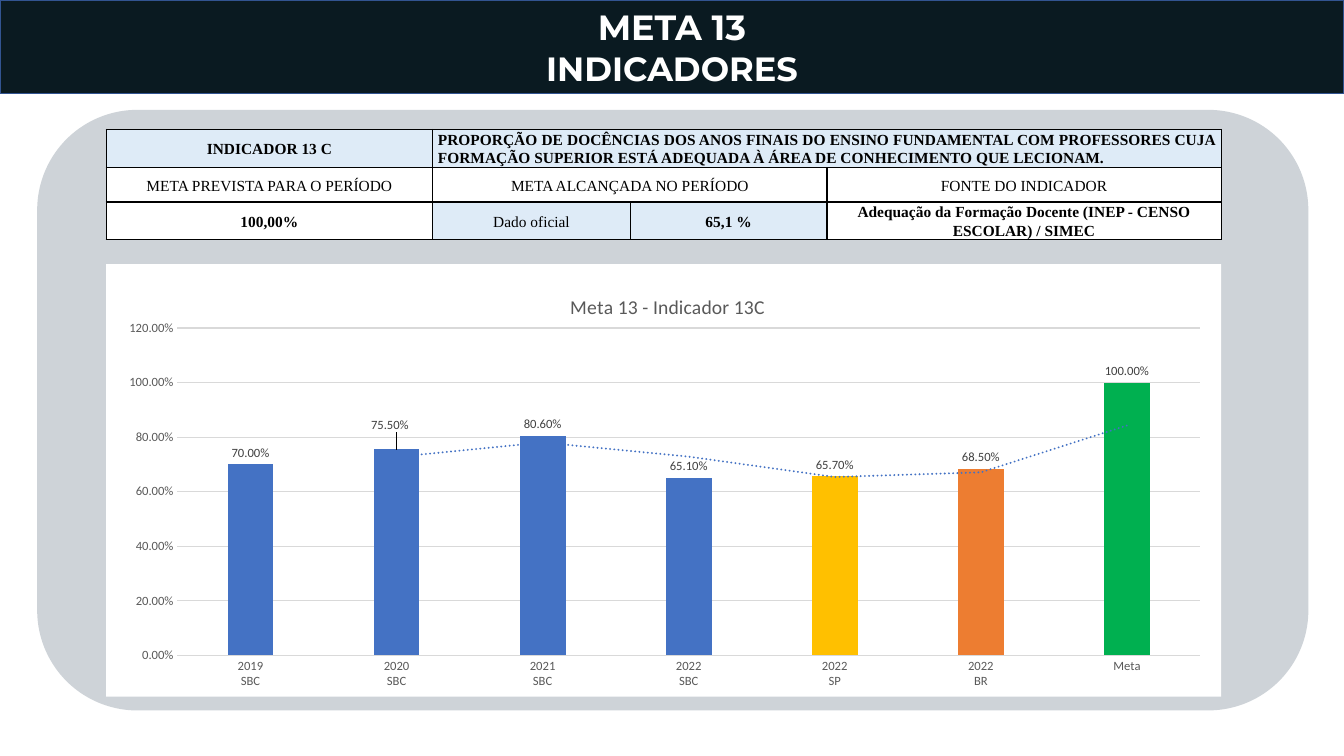
from dataclasses import dataclass
from typing import Any, Optional

from lxml import etree
from pptx import Presentation
from pptx.chart.data import CategoryChartData as ChartData
from pptx.dml.color import RGBColor as Rgb
from pptx.enum.chart import XL_CHART_TYPE as ChartKind
from pptx.enum.chart import XL_LABEL_POSITION as LabelPlace
from pptx.enum.chart import XL_TICK_MARK as Tick
from pptx.enum.shapes import MSO_SHAPE as Preset
from pptx.enum.text import MSO_ANCHOR as Anchor
from pptx.enum.text import MSO_AUTO_SIZE as AutoSize
from pptx.enum.text import PP_ALIGN as Align
from pptx.oxml import parse_xml
from pptx.oxml.ns import nsdecls, qn
from pptx.util import Pt

COLORS = {
    "band": "0A1A21", "band_line": "325491", "panel": "CED3D8", "white": "FFFFFF",
    "black": "000000", "cell": "DEEBF7", "axis": "595959", "label": "404040",
    "grid": "D9D9D9", "city": "4472C4", "state": "FFC000", "country": "ED7D31",
    "goal": "00B050",
}
PERCENT = "0.00%"
CHART_FONT = "Calibri"


@dataclass
class CellSpec:
    row: int
    column: int
    text: str
    bold: bool = False
    fill: str = "white"
    span: int = 1
    align: Any = Align.CENTER


@dataclass
class Bar:
    category: str
    value: float
    color: Optional[str] = None


CELLS = [
    CellSpec(0, 0, "INDICADOR 13 C", True, "cell"),
    CellSpec(0, 1, "PROPORÇÃO DE DOCÊNCIAS DOS ANOS FINAIS DO ENSINO FUNDAMENTAL COM "
             "PROFESSORES CUJA FORMAÇÃO SUPERIOR ESTÁ ADEQUADA À ÁREA DE CONHECIMENTO "
             "QUE LECIONAM.", True, "cell", 3, Align.JUSTIFY),
    CellSpec(1, 0, "META PREVISTA PARA O PERÍODO"),
    CellSpec(1, 1, "META ALCANÇADA NO PERÍODO", span=2),
    CellSpec(1, 3, "FONTE DO INDICADOR"),
    CellSpec(2, 0, "100,00%", True),
    CellSpec(2, 1, "Dado oficial", fill="cell"),
    CellSpec(2, 2, "65,1 %", True, "cell"),
    CellSpec(2, 3, "Adequação da Formação Docente (INEP - CENSO ESCOLAR) / SIMEC", True),
]
BARS = [
    Bar("2019\nSBC", 0.7), Bar("2020\nSBC", 0.755), Bar("2021\nSBC", 0.806),
    Bar("2022\nSBC", 0.651), Bar("2022\nSP", 0.657, "state"),
    Bar("2022\nBR", 0.685, "country"), Bar("Meta", 1, "goal"),
]


def rgb(name: str) -> Rgb:
    return Rgb.from_string(COLORS[name])


def set_all(target: Any, values: dict) -> None:
    for name, value in values.items():
        setattr(target, name, value)


def paint(target: Any, color: str) -> None:
    target.fill.solid()
    target.fill.fore_color.rgb = rgb(color)


def style_font(font: Any, name: str, size: float, color: str, bold: bool = False) -> None:
    set_all(font, {"name": name, "size": Pt(size), "bold": bold})
    font.color.rgb = rgb(color)


def style_line(line: Any, color: str, width: float) -> None:
    line.color.rgb = rgb(color)
    line.width = Pt(width)


def add_title(page: Any) -> None:
    box = page.shapes.title
    set_all(box, {"left": Pt(0), "top": Pt(0), "width": Pt(960), "height": Pt(67)})
    paint(box, "band")
    style_line(box.line, "band_line", 1)
    frame = box.text_frame
    set_all(frame, {"text": "META 13\nINDICADORES", "auto_size": AutoSize.NONE,
                    "vertical_anchor": Anchor.MIDDLE})
    for para, size in zip(frame.paragraphs, (25, 24)):
        set_all(para, {"alignment": Align.CENTER, "line_spacing": 1.0})
        style_font(para.runs[0].font, "Montserrat", size, "white", True)


def add_panel(page: Any) -> None:
    panel = page.shapes.add_shape(Preset.ROUNDED_RECTANGLE, Pt(26.6), Pt(78.5), Pt(908), Pt(429))
    panel.shadow.inherit = False
    paint(panel, "panel")
    panel.line.fill.background()


def add_borders(cell: Any) -> None:
    properties = cell._tc.get_or_add_tcPr()
    for index, side in enumerate(("lnL", "lnR", "lnT", "lnB")):
        properties.insert(index, parse_xml(
            f'<a:{side} {nsdecls("a")} w="{Pt(1)}"><a:solidFill>'
            f'<a:srgbClr val="{COLORS["black"]}"/></a:solidFill></a:{side}>'))


def add_indicator_table(page: Any) -> None:
    widths, heights = (233.4, 141, 140.6, 281.5), (27.4, 24.4, 27.1)
    frame = page.shapes.add_table(len(heights), len(widths), Pt(75.8), Pt(92.5),
                                  Pt(sum(widths)), Pt(sum(heights)))
    table = frame.table
    set_all(table, {"first_row": False, "horz_banding": False})
    for column, width in zip(table.columns, widths):
        column.width = Pt(width)
    for row, height in zip(table.rows, heights):
        row.height = Pt(height)
    for cell in table.iter_cells():
        set_all(cell, {"margin_left": Pt(3.6), "margin_right": Pt(3.6), "margin_top": Pt(0.5),
                       "margin_bottom": Pt(0), "vertical_anchor": Anchor.MIDDLE})
        paint(cell, "white")
        add_borders(cell)
    for item in CELLS:
        cell = table.cell(item.row, item.column)
        if item.span > 1:
            cell.merge(table.cell(item.row, item.column + item.span - 1))
        paint(cell, item.fill)
        para = cell.text_frame.paragraphs[0]
        set_all(para, {"alignment": item.align, "line_spacing": 1.07, "space_after": Pt(8)})
        span = para.add_run()
        span.text = item.text
        style_font(span.font, "Times New Roman", 11, "black", item.bold)


def layout_xml(**places: Any) -> Any:
    """Manual chart layout; keyword names are the c:manualLayout children."""
    layout = etree.Element(qn("c:layout"))
    manual = etree.SubElement(layout, qn("c:manualLayout"))
    for name, value in places.items():
        etree.SubElement(manual, qn(f"c:{name}")).set("val", str(value))
    return layout


def style_axes(chart: Any) -> None:
    for axis in (chart.category_axis, chart.value_axis):
        set_all(axis, {"major_tick_mark": Tick.NONE, "minor_tick_mark": Tick.NONE})
        style_font(axis.tick_labels.font, CHART_FONT, 9, "axis")
    style_line(chart.category_axis.format.line, "grid", 0.75)
    values = chart.value_axis
    set_all(values, {"minimum_scale": 0, "maximum_scale": 1.2, "major_unit": 0.2})
    set_all(values.tick_labels, {"number_format": PERCENT, "number_format_is_linked": False})
    style_line(values.major_gridlines.format.line, "grid", 0.75)
    values.format.line.fill.background()


def style_series(plot: Any) -> None:
    set_all(plot, {"gap_width": 219, "overlap": -27, "vary_by_categories": False})
    series = plot.series[0]
    paint(series.format, "city")
    for index, bar in enumerate(BARS):
        if bar.color:
            paint(series.points[index].format, bar.color)
    labels = series.data_labels
    set_all(labels, {"show_value": True, "position": LabelPlace.OUTSIDE_END,
                     "number_format": PERCENT, "number_format_is_linked": False})
    style_font(labels.font, CHART_FONT, 9, "label")

    # The 2020 label is lifted clear of the trend line
    lifted = series.points[1].data_label
    style_font(lifted.font, CHART_FONT, 9, "label")
    lifted.position = LabelPlace.OUTSIDE_END
    series._element.find(f'.//{qn("c:dLbl")}/{qn("c:idx")}').addnext(
        layout_xml(x=-0.006, y=-0.03))

    # Moving average over two columns
    series._element.find(qn("c:cat")).addprevious(parse_xml(
        f'<c:trendline {nsdecls("c", "a")}><c:spPr><a:ln w="{Pt(1.5)}" cap="rnd"><a:solidFill>'
        f'<a:srgbClr val="{COLORS["city"]}"/></a:solidFill><a:prstDash val="sysDot"/></a:ln>'
        '</c:spPr><c:trendlineType val="movingAvg"/><c:period val="2"/>'
        '<c:dispRSqr val="0"/><c:dispEq val="0"/></c:trendline>'))


def add_indicator_chart(page: Any) -> None:
    data = ChartData(number_format=PERCENT)
    data.categories = [bar.category for bar in BARS]
    data.add_series("Series 1", [bar.value for bar in BARS])
    chart = page.shapes.add_chart(ChartKind.COLUMN_CLUSTERED, Pt(75.8), Pt(188.6),
                                  Pt(796.5), Pt(309), data).chart
    style_font(chart.font, CHART_FONT, 10, "black")
    set_all(chart, {"has_legend": False, "has_title": True})
    root = chart._chartSpace.find(qn("c:chart"))
    root.addnext(parse_xml(
        f'<c:spPr {nsdecls("c", "a")}><a:solidFill><a:srgbClr val="{COLORS["white"]}"/>'
        '</a:solidFill><a:ln><a:noFill/></a:ln></c:spPr>'))

    # Title and plot area
    title = chart.chart_title
    title.text_frame.text = "Meta 13 - Indicador 13C"
    style_font(title.text_frame.paragraphs[0].runs[0].font, CHART_FONT, 14, "axis")
    places = (("title", layout_xml(xMode="edge", yMode="edge", x=0.413, y=0.06)),
              ("plotArea", layout_xml(layoutTarget="inner", xMode="edge", yMode="edge",
                                      x=0.064, y=0.148, w=0.917, h=0.757)))
    for name, layout in places:
        parent = root.find(qn(f"c:{name}"))
        for previous in parent.findall(qn("c:layout")):
            parent.remove(previous)
        parent.insert(1 if name == "title" else 0, layout)
    style_axes(chart)
    style_series(chart.plots[0])


def main() -> None:
    deck = Presentation()
    set_all(deck, {"slide_width": Pt(960), "slide_height": Pt(540)})
    page = deck.slides.add_slide(deck.slide_layouts[5])
    add_title(page)
    add_panel(page)
    add_indicator_table(page)
    add_indicator_chart(page)
    deck.save("out.pptx")


if __name__ == "__main__":
    main()
